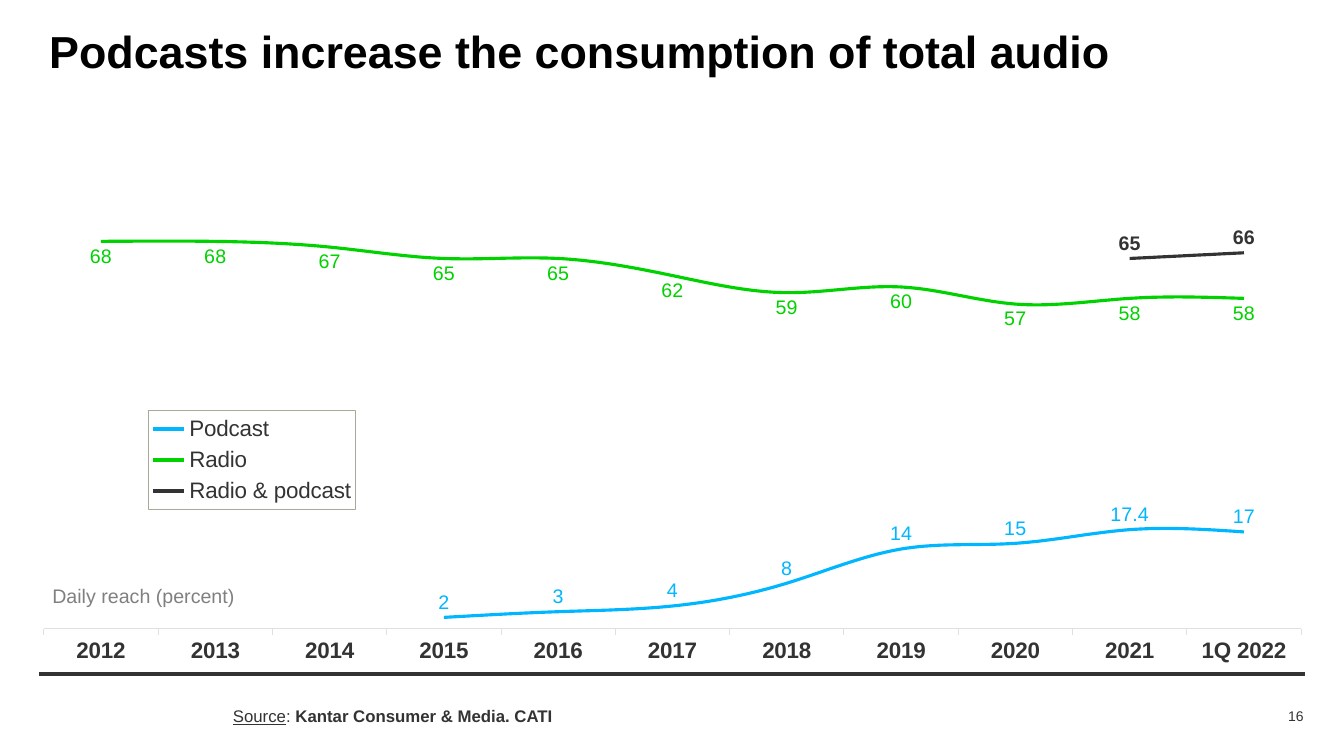
from lxml import etree
from pptx import Presentation
from pptx.chart.data import CategoryChartData
from pptx.dml.color import RGBColor
from pptx.enum import chart as charts, shapes, text
from pptx.oxml import ns
from pptx.util import Inches, Pt

FONT = "Arial"
DARK = "333333"
YEARS = [str(year) for year in range(2012, 2022)] + ["1Q 2022"]
ABOVE = charts.XL_LABEL_POSITION.ABOVE
BELOW = charts.XL_LABEL_POSITION.BELOW
# name, values, colour, label position, label format, bold labels
REACH = [
    ("Podcast", [None] * 3 + [2, 3, 4, 8, 14, 15, 17.4, 17], "00B6FF", ABOVE, "General", False),
    ("Radio", [68, 68, 67, 65, 65, 62, 59, 60, 57, 58, 58], "00D200", BELOW, "0", False),
    ("Radio & podcast", [None] * 9 + [65, 66], DARK, ABOVE, "General", True),
]


def color(value):
    return RGBColor.from_string(value)


def style_font(font, size, value=DARK, **options):
    settings = {"name": FONT, "size": Pt(size), "bold": False, **options}
    for name, setting in settings.items():
        setattr(font, name, setting)
    font.color.rgb = color(value)


def style_line(line, value, width):
    line.color.rgb = color(value)
    line.width = Pt(width)


def add_text(page, box, spans, align=text.PP_ALIGN.LEFT, margins=(0, 0), wrap=True):
    """Place one line of (wording, size, colour, font options) spans."""
    frame = page.shapes.add_textbox(*map(Inches, box)).text_frame
    side, edge = map(Inches, margins)
    settings = {"word_wrap": wrap, "vertical_anchor": text.MSO_ANCHOR.MIDDLE,
                "margin_left": side, "margin_right": side,
                "margin_top": edge, "margin_bottom": edge}
    for name, setting in settings.items():
        setattr(frame, name, setting)
    para = frame.paragraphs[0]
    para.alignment = align
    for wording, size, value, options in spans:
        span = para.add_run()
        span.text = wording
        style_font(span.font, size, value, **options)


def chart_layout(inner=False, **fractions):
    """Return a manual layout element, in fractions of the chart."""
    layout = etree.Element(ns.qn("c:layout"))
    manual = etree.SubElement(layout, ns.qn("c:manualLayout"))
    settings = [("layoutTarget", "inner")] if inner else []
    settings += [("xMode", "edge"), ("yMode", "edge"), *fractions.items()]
    for name, setting in settings:
        etree.SubElement(manual, ns.qn(f"c:{name}")).set("val", str(setting))
    return layout


def place_plot(chart):
    area = chart._chartSpace.chart.plotArea
    for layout in area.findall(ns.qn("c:layout")):
        area.remove(layout)
    area.insert(0, chart_layout(inner=True, x=0, y=0.025, w=1, h=0.887))


def add_legend(chart):
    chart.has_legend = True
    legend = chart.legend
    legend.position = charts.XL_LEGEND_POSITION.RIGHT
    legend.include_in_layout = False
    style_font(legend.font, 16)
    element = legend._element
    for layout in element.findall(ns.qn("c:layout")):
        element.remove(layout)
    element.find(ns.qn("c:legendPos")).addnext(
        chart_layout(x=0.083, y=0.458, w=0.165, h=0.207))
    frame = etree.Element(ns.qn("c:spPr"))
    outline = etree.SubElement(frame, ns.qn("a:ln"), w=str(Pt(0.75)))
    fill = etree.SubElement(outline, ns.qn("a:solidFill"))
    etree.SubElement(fill, ns.qn("a:srgbClr"), val="A9A99A")
    element.find(ns.qn("c:txPr")).addprevious(frame)


def style_axes(chart):
    years = chart.category_axis
    years.major_tick_mark = charts.XL_TICK_MARK.OUTSIDE
    years.tick_label_position = charts.XL_TICK_LABEL_POSITION.LOW
    style_font(years.tick_labels.font, 16, bold=True)
    style_line(years.format.line, "E0E0E0", 0.75)
    settings = {"visible": False, "has_major_gridlines": False,
                "minimum_scale": 0, "maximum_scale": 75, "major_unit": 20}
    for name, setting in settings.items():
        setattr(chart.value_axis, name, setting)


def add_reach_chart(page, box):
    data = CategoryChartData()
    data.categories = YEARS
    for name, values, *_ in REACH:
        data.add_series(name, values)
    chart = page.shapes.add_chart(
        charts.XL_CHART_TYPE.LINE, *map(Inches, box), data).chart
    chart.has_title = False
    style_font(chart.font, 10)
    chart.plots[0].vary_by_categories = False
    for series, (_, _, value, position, number_format, bold) in zip(chart.plots[0].series, REACH):
        series.smooth = True
        style_line(series.format.line, value, 2.25)
        settings = {"show_value": True, "position": position,
                    "number_format": number_format, "number_format_is_linked": False}
        for name, setting in settings.items():
            setattr(series.data_labels, name, setting)
        style_font(series.data_labels.font, 14, value, bold=bold)
    style_axes(chart)
    add_legend(chart)
    place_plot(chart)


def add_footer(page, left, top, width):
    """Draw the rule with the source and page number under it."""
    right = left + width
    rule = page.shapes.add_connector(
        shapes.MSO_CONNECTOR.STRAIGHT, *map(Inches, (left, top, right, top)))
    style_line(rule.line, DARK, 3)
    etree.SubElement(rule._element.spPr, ns.qn("a:effectLst"))
    add_text(page, (left + 1.92, top + 0.31, 7.09, 0.2), [
        ("Source", 12, DARK, {"underline": True}),
        (": ", 12, DARK, {}),
        ("Kantar Consumer & Media. CATI", 12, DARK, {"bold": True})])
    add_text(page, (right - 1.07, top + 0.31, 1.06, 0.2),
             [("16", 10, DARK, {})], align=text.PP_ALIGN.RIGHT)


def add_audio_slide(deck):
    page = deck.slides.add_slide(deck.slide_layouts[6])
    add_text(page, (0.39, 0.06, 12.57, 0.88),
             [("Podcasts increase the consumption of total audio", 32, "000000", {"bold": True})],
             margins=(0.1, 0.05))
    add_reach_chart(page, (0.43, 1.88, 12.48, 4.78))
    add_text(page, (0.42, 5.74, 2.02, 0.34),
             [("Daily reach (percent)", 14, "808080", {})],
             margins=(0.1, 0.05), wrap=False)
    add_footer(page, 0.39, 6.69, 12.55)


def main():
    deck = Presentation()
    deck.slide_width, deck.slide_height = Inches(13.33), Inches(7.5)
    add_audio_slide(deck)
    deck.save("out.pptx")


if __name__ == "__main__":
    main()
